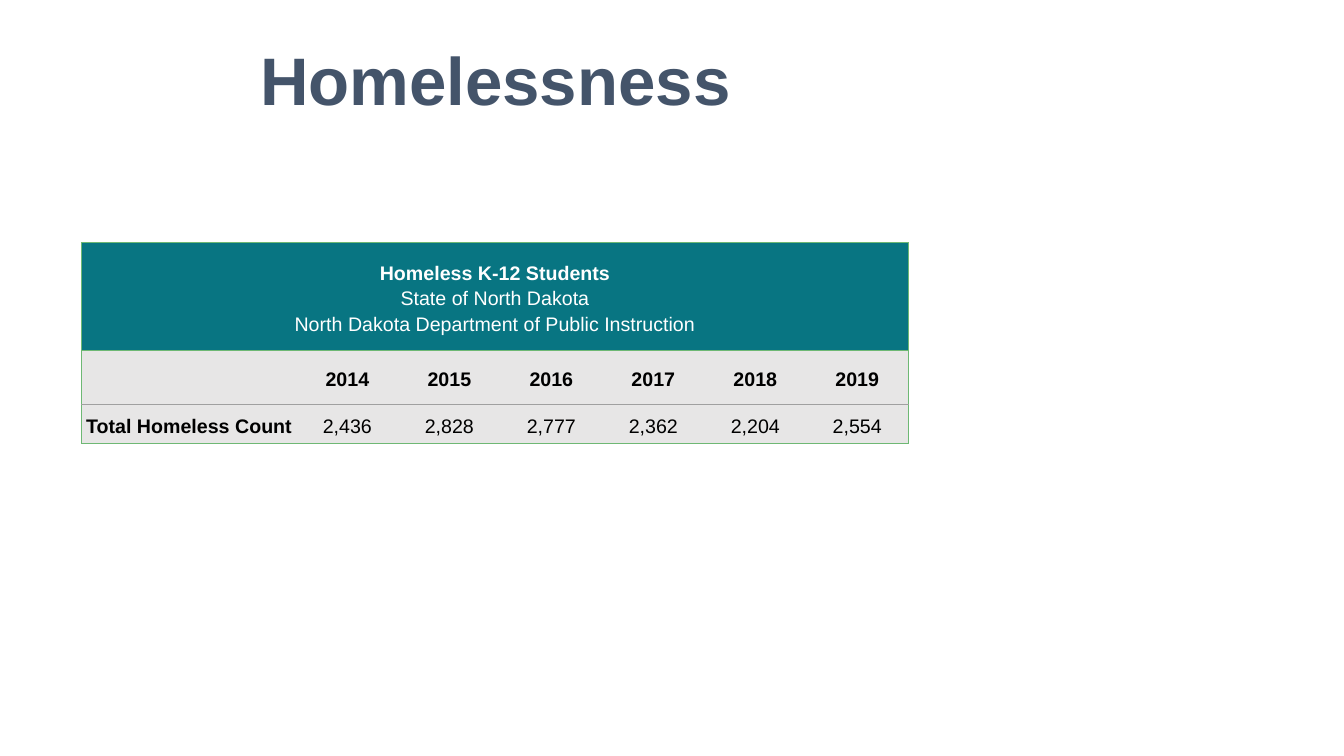
from dataclasses import dataclass

from lxml import etree
from pptx import Presentation
from pptx.dml.color import RGBColor
from pptx.enum.text import MSO_ANCHOR, PP_ALIGN
from pptx.oxml.ns import qn
from pptx.util import Cm, Pt

CENTER = PP_ALIGN.CENTER
MIDDLE = MSO_ANCHOR.MIDDLE
FONT = "Arial"
SLATE, WHITE, BLACK = "44546A", "FFFFFF", "000000"
TEAL, LIGHT_GREY, GREEN, MID_GREY = "087582", "E7E6E6", "6EB874", "A0A0A0"
LABEL_WIDTH, YEAR_WIDTH = 5.41, 2.57


@dataclass
class TableRow:
    height: float
    texts: list[str]
    fill: str
    color: str
    top: str
    bottom: str
    bold: bool = False


ROWS = [
    TableRow(2.72, ["Homeless K-12 Students\nState of North Dakota\n"
                    "North Dakota Department of Public Instruction"] + [""] * 6,
             TEAL, WHITE, GREEN, GREEN),
    TableRow(1.35, ["", "2014", "2015", "2016", "2017", "2018", "2019"],
             LIGHT_GREY, BLACK, GREEN, MID_GREY, bold=True),
    TableRow(0.99, ["Total Homeless Count", "2,436", "2,828", "2,777",
                    "2,362", "2,204", "2,554"],
             LIGHT_GREY, BLACK, MID_GREY, GREEN),
]


def rgb(value: str) -> RGBColor:
    return RGBColor.from_string(value)


def format_span(span, size: float, color: str, bold: bool) -> None:
    span.font.name = FONT
    span.font.size = Pt(size)
    span.font.bold = bold
    span.font.color.rgb = rgb(color)


def set_borders(cell, colors: dict[str, str | None]) -> None:
    properties = cell._tc.get_or_add_tcPr()
    for position, (side, color) in enumerate(colors.items()):
        line = etree.Element(qn(f"a:ln{side}"), w=str(Pt(1)))
        if color:
            fill = etree.SubElement(line, qn("a:solidFill"))
            etree.SubElement(fill, qn("a:srgbClr"), val=color)
        else:
            etree.SubElement(line, qn("a:noFill"))
        properties.insert(position, line)


def fill_cell(cell, row: TableRow, column: int) -> None:
    cell.fill.solid()
    cell.fill.fore_color.rgb = rgb(row.fill)
    cell.vertical_anchor = MIDDLE
    cell.margin_left = cell.margin_right = cell.margin_top = Cm(0.03)
    cell.margin_bottom = 0
    set_borders(cell, {
        "L": GREEN if column == 0 else None,
        "R": GREEN if column == len(row.texts) - 1 else None,
        "T": row.top,
        "B": row.bottom,
    })
    if not row.texts[column]:
        return
    cell.text_frame.text = row.texts[column]
    for number, para in enumerate(cell.text_frame.paragraphs):
        para.alignment = CENTER
        para.line_spacing = 1.15
        for span in para.runs:
            format_span(span, 14, row.color,
                        row.bold or (column == 0 and number == 0))


def add_title(page) -> None:
    title = page.shapes.title
    title.left, title.top = Cm(0.71), Cm(0.84)
    title.width, title.height = Cm(23.55), Cm(2.29)
    title.text_frame.text = "Homelessness"
    title.text_frame.vertical_anchor = MIDDLE
    para = title.text_frame.paragraphs[0]
    para.alignment = CENTER
    format_span(para.runs[0], 48, SLATE, True)


def add_student_table(page) -> None:
    widths = [LABEL_WIDTH] + [YEAR_WIDTH] * 6
    table = page.shapes.add_table(
        len(ROWS), len(widths), Cm(2.06), Cm(6.12),
        Cm(sum(widths)), Cm(sum(row.height for row in ROWS))).table
    for column, width in zip(table.columns, widths):
        column.width = Cm(width)
    for row_number, row in enumerate(ROWS):
        table.rows[row_number].height = Cm(row.height)
        for column in range(len(widths)):
            fill_cell(table.cell(row_number, column), row, column)
    # The heading spans the full width, so its first cell carries the right edge
    heading = table.cell(0, 0)
    heading.merge(table.cell(0, len(widths) - 1))
    right_edge = heading._tc.tcPr.find(qn("a:lnR"))
    heading._tc.tcPr.remove(right_edge)
    set_borders(heading, {"R": GREEN})
    left_edge = heading._tc.tcPr.find(qn("a:lnL"))
    heading._tc.tcPr.insert(0, left_edge)


def main() -> None:
    deck = Presentation()
    deck.slide_width, deck.slide_height = Cm(33.87), Cm(19.05)
    page = deck.slides.add_slide(deck.slide_layouts[5])
    add_title(page)
    add_student_table(page)
    deck.save("out.pptx")


if __name__ == "__main__":
    main()
